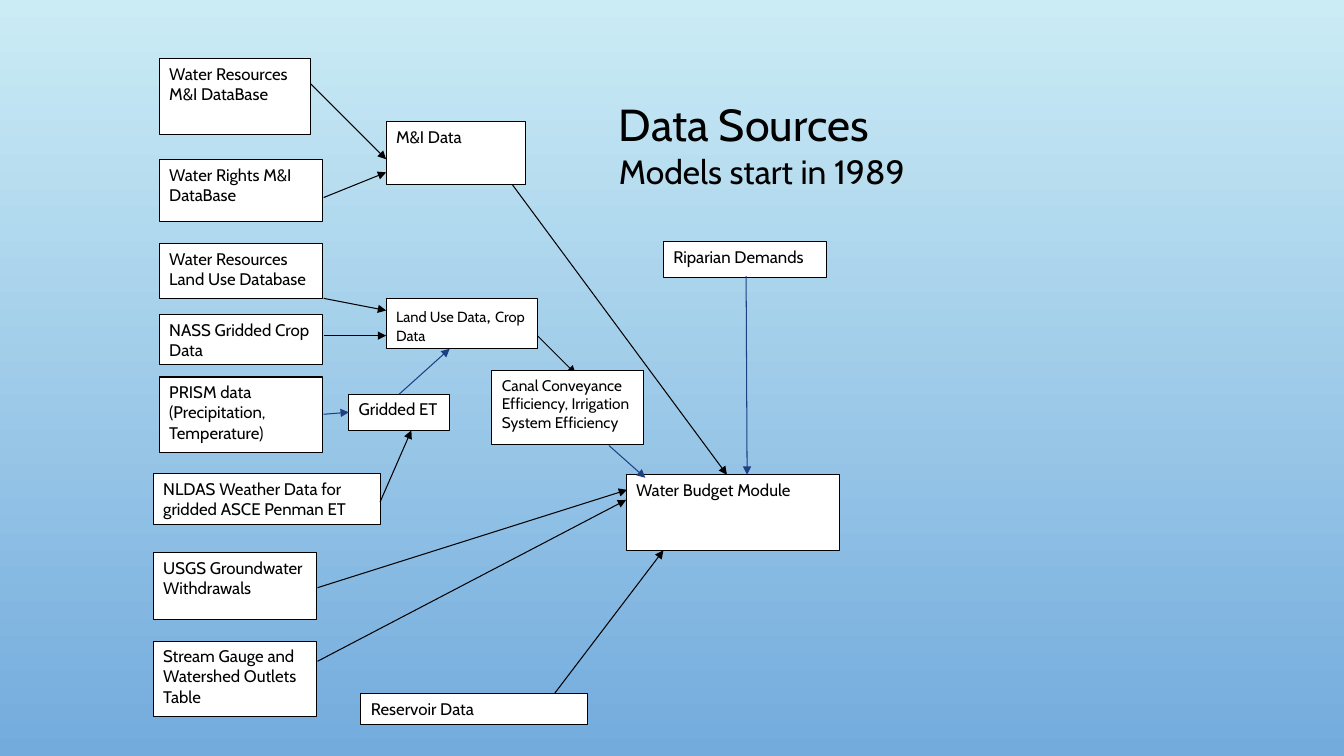
from dataclasses import dataclass

from lxml import etree
from pptx import Presentation
from pptx.dml.color import RGBColor
from pptx.enum.shapes import MSO_CONNECTOR, MSO_SHAPE
from pptx.enum.text import MSO_ANCHOR, PP_ALIGN
from pptx.oxml.ns import qn
from pptx.util import Inches, Pt

RECTANGLE = MSO_SHAPE.RECTANGLE
STRAIGHT = MSO_CONNECTOR.STRAIGHT
TOP = MSO_ANCHOR.TOP
LEFT = PP_ALIGN.LEFT


@dataclass(frozen=True)
class Theme:
    font: str = "Cabin"
    ink: str = "000000"
    paper: str = "FFFFFF"
    accent: str = "1F3F83"
    sky_top: str = "CBECF5"
    sky_bottom: str = "73ABDD"
    title: float = 32
    subtitle: float = 24
    body: float = 12
    small: float = 11
    tiny: float = 10.5
    comma: float = 14
    line: float = 0.75


THEME = Theme()


def rgb(value):
    return RGBColor.from_string(value)


def write_text(paragraph, text, size=THEME.body, color=THEME.ink, font=THEME.font):
    """Append one formatted run to a paragraph."""
    paragraph.alignment = LEFT
    run = paragraph.add_run()
    run.text = text
    run.font.name = font
    run.font.size = Pt(size)
    run.font.color.rgb = rgb(color)


class DiagramSlide:
    def __init__(self, presentation, theme):
        self.theme = theme
        self.slide = presentation.slides.add_slide(presentation.slide_layouts[6])

    def background(self):
        fill = self.slide.background.fill
        fill.gradient()
        fill.gradient_angle = 270
        colors = (self.theme.sky_top, self.theme.sky_bottom)
        for stop, color, position in zip(fill.gradient_stops, colors, (0, 1)):
            stop.color.rgb = rgb(color)
            stop.position = position

    def title(self, left, top, width, height, lines):
        box = self.slide.shapes.add_textbox(*map(Inches, (left, top, width, height)))
        frame = box.text_frame
        frame.word_wrap = True
        for index, (text, size) in enumerate(lines):
            paragraph = frame.add_paragraph() if index else frame.paragraphs[0]
            write_text(paragraph, text, size=size)

    def box(self, left, top, width, height, *runs):
        """Draw a bordered box; each run is a (text, size) pair."""
        shape = self.slide.shapes.add_shape(
            RECTANGLE, *map(Inches, (left, top, width, height)))
        shape.shadow.inherit = False
        shape.fill.solid()
        shape.fill.fore_color.rgb = rgb(self.theme.paper)
        shape.line.color.rgb = rgb(self.theme.ink)
        shape.line.width = Pt(self.theme.line)
        frame = shape.text_frame
        frame.word_wrap = True
        frame.vertical_anchor = TOP
        for text, size in runs:
            write_text(frame.paragraphs[0], text, size=size)

    def arrow(self, start, end, color):
        connector = self.slide.shapes.add_connector(
            STRAIGHT, *map(Inches, (*start, *end)))
        connector.line.color.rgb = rgb(color)
        connector.line.width = Pt(self.theme.line)
        line = connector.line._get_or_add_ln()
        etree.SubElement(line, qn("a:tailEnd"), type="triangle")
        etree.SubElement(connector._element.spPr, qn("a:effectLst"))


BOXES = [
    # Sources in the left column
    (1.58, 0.58, 1.5, 0.75, "Water Resources M&I DataBase"),
    (1.58, 1.58, 1.62, 0.62, "Water Rights M&I DataBase"),
    (1.58, 2.42, 1.62, 0.54, "Water Resources Land Use Database"),
    (1.58, 3.12, 1.62, 0.5, "NASS Gridded Crop Data"),
    (1.58, 3.74, 1.62, 0.75, "PRISM data (Precipitation, Temperature)"),
    (1.52, 4.7, 2.25, 0.5, "NLDAS Weather Data for gridded ASCE Penman ET"),
    (1.52, 5.48, 1.62, 0.67, "USGS Groundwater Withdrawals"),
    (1.52, 6.36, 1.62, 0.75, "Stream Gauge and Watershed Outlets Table"),
    # Intermediate data and the water budget
    (3.83, 1.21, 1.38, 0.62, "M&I Data"),
    (3.46, 3.91, 1, 0.36, "Gridded ET"),
    (3.58, 6.88, 2.25, 0.31, "Reservoir Data"),
    (6.58, 2.4, 1.62, 0.35, "Riparian Demands"),
    (6.21, 4.71, 2.12, 0.75, "Water Budget Module"),
]

DATA_ARROWS = [
    ((3.08, 0.83), (3.83, 1.58)),
    ((3.21, 1.96), (3.83, 1.71)),
    ((5.08, 1.83), (7.21, 4.71)),
    ((3.21, 2.96), (3.83, 3.08)),
    ((3.21, 3.33), (3.83, 3.33)),
    ((5.33, 3.33), (5.71, 3.71)),
    ((3.77, 4.98), (4.08, 4.27)),
    ((3.15, 5.83), (6.22, 4.86)),
    ((3.15, 6.56), (6.21, 4.96)),
    ((5.5, 6.88), (6.58, 5.46)),
]

ACCENT_ARROWS = [
    ((3.21, 4.11), (3.46, 4.09)),
    ((3.96, 3.91), (4.46, 3.46)),
    ((6.04, 4.42), (6.4, 4.74)),
    ((7.4, 2.74), (7.41, 4.71)),
]


def main():
    presentation = Presentation()
    presentation.slide_width = Inches(13.33)
    presentation.slide_height = Inches(7.5)
    diagram = DiagramSlide(presentation, THEME)
    diagram.background()

    # Title
    diagram.title(6.04, 0.91, 3.68, 1.04, [
        ("Data Sources", THEME.title),
        ("Models start in 1989", THEME.subtitle),
    ])

    # Boxes
    for *place, text in BOXES:
        diagram.box(*place, (text, THEME.body))
    diagram.box(3.83, 2.96, 1.5, 0.5,
                ("Land Use Data", THEME.tiny),
                (", ", THEME.comma),
                ("Crop Data", THEME.tiny))

    # Arrows, with the efficiency box over the arrowhead that enters it
    for start, end in DATA_ARROWS:
        diagram.arrow(start, end, THEME.ink)
    diagram.box(4.88, 3.68, 1.5, 0.73,
                ("Canal Conveyance Efficiency, Irrigation System Efficiency",
                 THEME.small))
    for start, end in ACCENT_ARROWS:
        diagram.arrow(start, end, THEME.accent)

    presentation.save("out.pptx")


if __name__ == "__main__":
    main()
